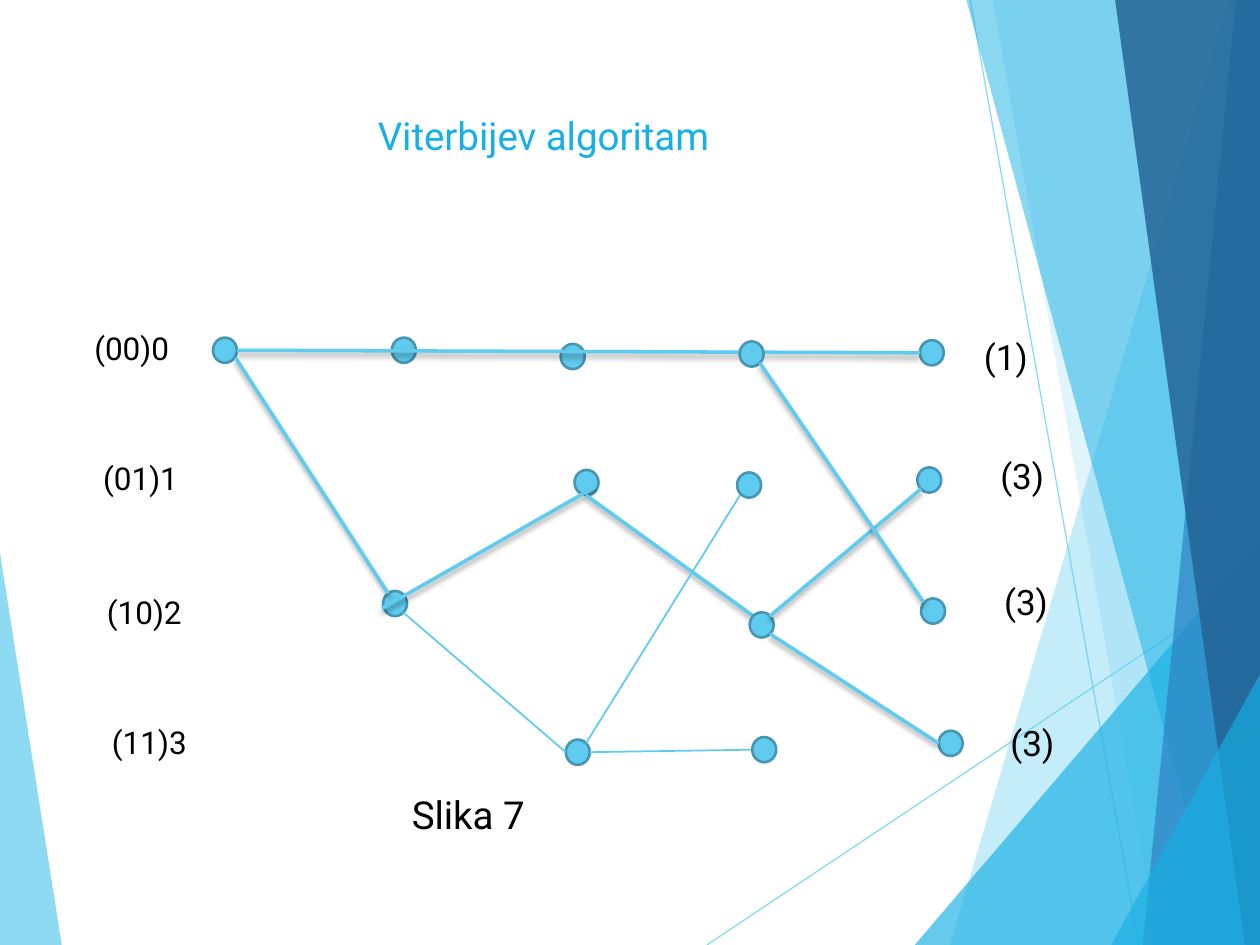
from lxml import etree
from pptx import Presentation
from pptx.dml.color import RGBColor
from pptx.enum import shapes
from pptx.oxml import ns
from pptx.util import Inches, Pt

SKY = RGBColor(0x5F, 0xCB, 0xEF)
CYAN = RGBColor(0x17, 0xB0, 0xE4)
BLUE = RGBColor(0x2E, 0x83, 0xC3)
NAVY = RGBColor(0x22, 0x62, 0x92)
NODE_EDGE = RGBColor(0x46, 0x96, 0xB1)
BLACK = RGBColor(0, 0, 0)

# Facets: colour, opacity in percent, corners
FACETS = [
    (SKY, 36, [(9.75, 0), (7.54, 7.5), (10, 7.5), (10, 0)]),
    (SKY, 20, [(7.88, 0), (9.19, 7.5), (10, 7.5), (10, 0)]),
    (CYAN, 66, [(7.26, 7.5), (10, 4.29), (10, 7.5)]),
    (CYAN, 50, [(7.67, 0), (9.7, 7.5), (10, 7.5), (10, 0)]),
    (BLUE, 70, [(9.81, 0), (9.07, 7.5), (10, 7.5), (10, 0)]),
    (NAVY, 82, [(8.85, 0), (9.88, 7.5), (10, 7.5), (10, 0)]),
    (CYAN, 66, [(8.82, 7.5), (10, 5.35), (10, 7.5)]),
]

# Trellis nodes (left, top) and branches, relative to the trellis box
NODES = [(0.19, 0.18), (1.61, 0.18), (2.95, 0.23), (5.8, 0.2),
         (3.06, 1.23), (5.78, 1.21), (1.54, 2.19), (5.81, 2.25),
         (2.99, 3.37), (5.95, 3.3)]
FOURTH_COLUMN_NODES = [(4.37, 0.21), (4.35, 1.25), (4.45, 2.36), (4.47, 3.35)]
SURVIVING = [((0.38, 0.28), (5.8, 0.3)), ((0.37, 0.34), (1.58, 2.21)),
             ((1.53, 2.33), (3.23, 1.36)), ((3.15, 1.43), (4.48, 2.39))]
DROPPED = [((1.7, 2.36), (2.99, 3.47)), ((3.18, 3.47), (4.47, 3.45)),
           ((4.38, 1.42), (3.15, 3.4))]
LAST_SURVIVING = [((4.61, 2.53), (5.95, 3.4)), ((4.61, 2.39), (5.81, 1.38)),
                  ((4.53, 0.38), (5.83, 2.28))]


def place(box, point):
    """Turn a point in inches inside the box into slide lengths."""
    return box[0] + Inches(point[0]), box[1] + Inches(point[1])


def set_opacity(shape, percent):
    for color in shape._element.spPr.iter(ns.qn("a:srgbClr")):
        etree.SubElement(color, ns.qn("a:alpha"), val=str(percent * 1000))


def add_text(slide, box, content, size=18, color=BLACK, wrap=True):
    frame = slide.shapes.add_textbox(*box).text_frame
    frame.word_wrap = wrap
    run = frame.paragraphs[0].add_run()
    run.text = content
    run.font.name = "Roboto"
    run.font.size = Pt(size)
    run.font.color.rgb = color


def add_line(slide, box, start, end, width, shadow=False):
    line = slide.shapes.add_connector(
        shapes.MSO_CONNECTOR.STRAIGHT, *place(box, start), *place(box, end))
    line.line.color.rgb = SKY
    line.line.width = Pt(width)
    effects = etree.SubElement(line._element.spPr, ns.qn("a:effectLst"))
    if shadow:
        outer = etree.SubElement(
            effects, ns.qn("a:outerShdw"), blurRad=str(Pt(3)),
            dist=str(Pt(2)), dir=str(90 * 60000), rotWithShape="0")
        color = etree.SubElement(outer, ns.qn("a:srgbClr"), val=str(BLACK))
        etree.SubElement(color, ns.qn("a:alpha"), val="35000")
    return line


def add_facet(slide, box, color, opacity, corners):
    points = [place(box, corner) for corner in corners]
    builder = slide.shapes.build_freeform(*points[0])
    builder.add_line_segments(points[1:], close=True)
    facet = builder.convert_to_shape()
    facet.shadow.inherit = False
    facet.fill.solid()
    facet.fill.fore_color.rgb = color
    facet.line.fill.background()
    set_opacity(facet, opacity)


def add_background(slide, box):
    add_facet(slide, box, SKY, 70, [(0, 4.39), (0.49, 7.5), (0, 7.5)])
    for start, end in [((5.61, 7.5), (10, 4.57)), ((7.7, 0), (9.04, 7.5))]:
        set_opacity(add_line(slide, box, start, end, 0.75), 70)
    for color, opacity, corners in FACETS:
        add_facet(slide, box, color, opacity, corners)


def add_nodes(slide, box, nodes):
    for node in nodes:
        circle = slide.shapes.add_shape(
            shapes.MSO_SHAPE.OVAL, *place(box, node), Inches(0.19), Inches(0.2))
        circle.shadow.inherit = False
        circle.fill.solid()
        circle.fill.fore_color.rgb = SKY
        circle.line.color.rgb = NODE_EDGE
        circle.line.width = Pt(1.5)


def add_branches(slide, box, branches, width=2, shadow=True):
    for start, end in branches:
        add_line(slide, box, start, end, width, shadow)


def add_trellis(slide, box):
    add_nodes(slide, box, NODES)
    add_branches(slide, box, SURVIVING)
    add_branches(slide, box, DROPPED, width=1, shadow=False)
    add_nodes(slide, box, FOURTH_COLUMN_NODES)
    add_branches(slide, box, LAST_SURVIVING)


def add_labels(slide, box, labels, size):
    """Write a column of labels, each shifted inside the box."""
    for content, offset in labels:
        add_text(slide, (*place(box, offset), *box[2:]), content, size=size)


def main():
    presentation = Presentation()
    presentation.slide_width, presentation.slide_height = Inches(10), Inches(7.5)
    slide = presentation.slides.add_slide(presentation.slide_layouts[6])

    add_background(slide, (0, 0))

    # Title and caption
    add_text(slide, (Inches(2.9), Inches(0.84), Inches(2.98), Inches(0.84)),
             "Viterbijev algoritam", size=22, color=CYAN, wrap=False)
    add_text(slide, (Inches(3.17), Inches(6.23), Inches(1.5), Inches(0.44)),
             "Slika 7", size=22)

    add_trellis(slide, (Inches(1.5), Inches(2.5)))

    # States on the left, path metrics on the right
    add_labels(slide, (Inches(0.65), Inches(2.56), Inches(0.87), Inches(0.4)),
               [("(00)0", (0, 0)), ("(01)1", (0.07, 1.03)),
                ("(10)2", (0.1, 2.1)), ("(11)3", (0.14, 3.13))], size=18)
    add_labels(slide, (Inches(7.71), Inches(2.61), Inches(0.89), Inches(0.44)),
               [("(1)", (0, 0)), ("(3)", (0.13, 0.95)),
                ("(3)", (0.16, 1.95)), ("(3)", (0.21, 3.07))], size=20)

    presentation.save("out.pptx")


if __name__ == "__main__":
    main()
